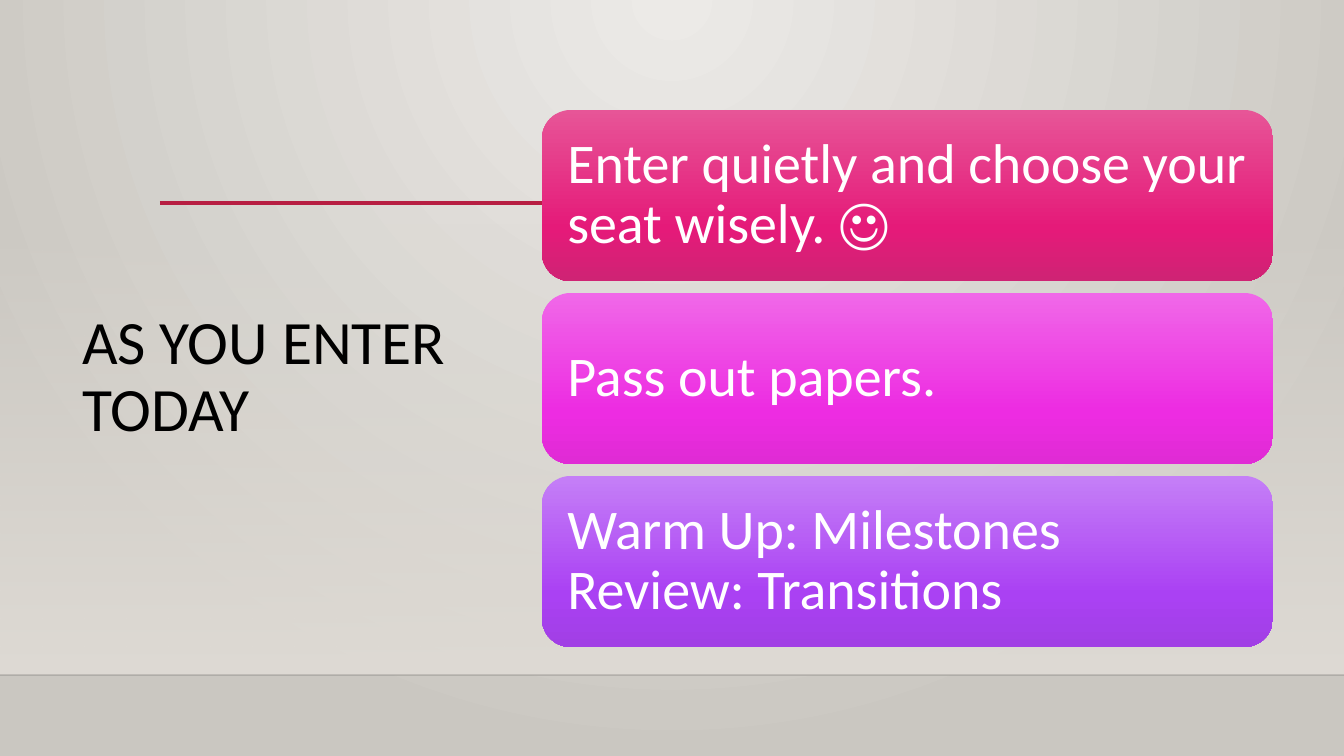
from pptx import Presentation
from pptx import util as u
from pptx.dml.color import RGBColor
from pptx.enum import shapes, text
from pptx.oxml import parse_xml
from pptx.oxml.ns import nsdecls, qn

BLACK = RGBColor(0x00, 0x00, 0x00)
WHITE = RGBColor(0xFF, 0xFF, 0xFF)
CRIMSON = RGBColor(0xB7, 0x1E, 0x42)
PALE = RGBColor(0xEC, 0xEA, 0xE7)
STONE = RGBColor(0xCA, 0xC7, 0xC1)
SAND = RGBColor(0xDF, 0xDB, 0xD5)
PINKS = RGBColor(0xE7, 0x55, 0x97), RGBColor(0xE5, 0x1A, 0x79), RGBColor(0xCF, 0x23, 0x74)
MAGENTAS = RGBColor(0xF0, 0x68, 0xE8), RGBColor(0xED, 0x2C, 0xE2), RGBColor(0xE0, 0x2B, 0xD5)
PURPLES = RGBColor(0xC5, 0x7F, 0xF7), RGBColor(0xAA, 0x41, 0xF3), RGBColor(0xA1, 0x3F, 0xE5)

FONT = "Calibri"
TITLE = "AS YOU ENTER TODAY"
STEPS = [
    ("Enter quietly and choose your seat wisely. ☺", PINKS),
    ("Pass out papers.", MAGENTAS),
    ("Warm Up: Milestones\vReview: Transitions", PURPLES),
]

SLIDE_WIDTH, SLIDE_HEIGHT = 1344, 756
TITLE_BOX = 72, 152, 391, 452
WALL_TOP, FLOOR_TOP = 223, 675
RULE_LEFT, RULE_RIGHT, RULE_Y = 160, 1220, 203
STEP_LEFT, STEP_TOP, STEP_WIDTH, STEP_HEIGHT, STEP_PITCH = 542, 110, 731, 171, 183
STEP_MARGIN = 17

DOWNWARD = '<a:lin ang="5400000" scaled="0"/>'
RADIAL = '<a:path path="circle"><a:fillToRect l="43000" t="0" r="43000" b="100000"/></a:path>'


def px(*lengths):
    return [round(length * u.Inches(1) / 100.8) for length in lengths]


def set_gradient(fill, element, stops, direction=DOWNWARD):
    fill.solid()
    solid = next(element.iter(qn("a:solidFill")))
    marks = "".join(
        f'<a:gs pos="{position * 1000}"><a:srgbClr val="{color}">'
        f'<a:alpha val="{alpha * 1000}"/></a:srgbClr></a:gs>'
        for position, color, alpha in stops
    )
    gradient = parse_xml(
        f'<a:gradFill {nsdecls("a")} rotWithShape="1"><a:gsLst>{marks}</a:gsLst>{direction}</a:gradFill>'
    )
    solid.getparent().replace(solid, gradient)


def add_block(slide, kind, box, stops):
    shape = slide.shapes.add_shape(kind, *px(*box))
    shape.shadow.inherit = False
    shape.line.fill.background()
    set_gradient(shape.fill, shape._element.spPr, stops)
    return shape


def add_rule(slide, left, right, y, color, width):
    rule = slide.shapes.add_connector(shapes.MSO_CONNECTOR.STRAIGHT, *px(left, y, right, y))
    rule.line.color.rgb = color
    rule.line.width = u.Pt(width)
    rule._element.spPr.append(parse_xml(f'<a:effectLst {nsdecls("a")}/>'))
    return rule


def set_text(shape, words, size, color):
    frame = shape.text_frame
    frame.text = words
    frame.word_wrap = True
    frame.auto_size = text.MSO_AUTO_SIZE.NONE
    frame.vertical_anchor = text.MSO_ANCHOR.MIDDLE
    paragraph = frame.paragraphs[0]
    paragraph.alignment = text.PP_ALIGN.LEFT
    paragraph.line_spacing = 0.9
    for run in paragraph.runs:
        run.font.name = FONT
        run.font.size = u.Pt(size)
        run.font.color.rgb = color


def main():
    """Build the class-entry slide with its title and three steps."""
    presentation = Presentation()
    presentation.slide_width, presentation.slide_height = px(SLIDE_WIDTH, SLIDE_HEIGHT)
    slide = presentation.slides.add_slide(presentation.slide_layouts[5])
    set_gradient(slide.background.fill, slide._element, [(0, PALE, 100), (100, STONE, 100)], RADIAL)

    wall = 0, WALL_TOP, SLIDE_WIDTH, FLOOR_TOP - WALL_TOP
    add_block(slide, shapes.MSO_SHAPE.RECTANGLE, wall, [(0, SAND, 0), (100, SAND, 100)])
    floor_edge = add_rule(slide, 0, SLIDE_WIDTH, FLOOR_TOP, BLACK, 1)
    edge_color = next(floor_edge._element.iter(qn("a:srgbClr")))
    edge_color.append(parse_xml(f'<a:alpha {nsdecls("a")} val="20000"/>'))
    add_rule(slide, RULE_LEFT, RULE_RIGHT, RULE_Y, CRIMSON, 2.5)

    title = slide.shapes.title
    title.left, title.top, title.width, title.height = px(*TITLE_BOX)
    set_text(title, TITLE, 44, BLACK)
    slide.shapes._spTree.append(title._element)

    for index, (words, colors) in enumerate(STEPS):
        box = STEP_LEFT, STEP_TOP + index * STEP_PITCH, STEP_WIDTH, STEP_HEIGHT
        stops = [(position, color, 100) for position, color in zip((0, 69, 100), colors)]
        step = add_block(slide, shapes.MSO_SHAPE.ROUNDED_RECTANGLE, box, stops)
        set_text(step, words, 40, WHITE)
        frame = step.text_frame
        frame.margin_left, frame.margin_top, frame.margin_right, frame.margin_bottom = px(*[STEP_MARGIN] * 4)

    presentation.save("out.pptx")


if __name__ == "__main__":
    main()
